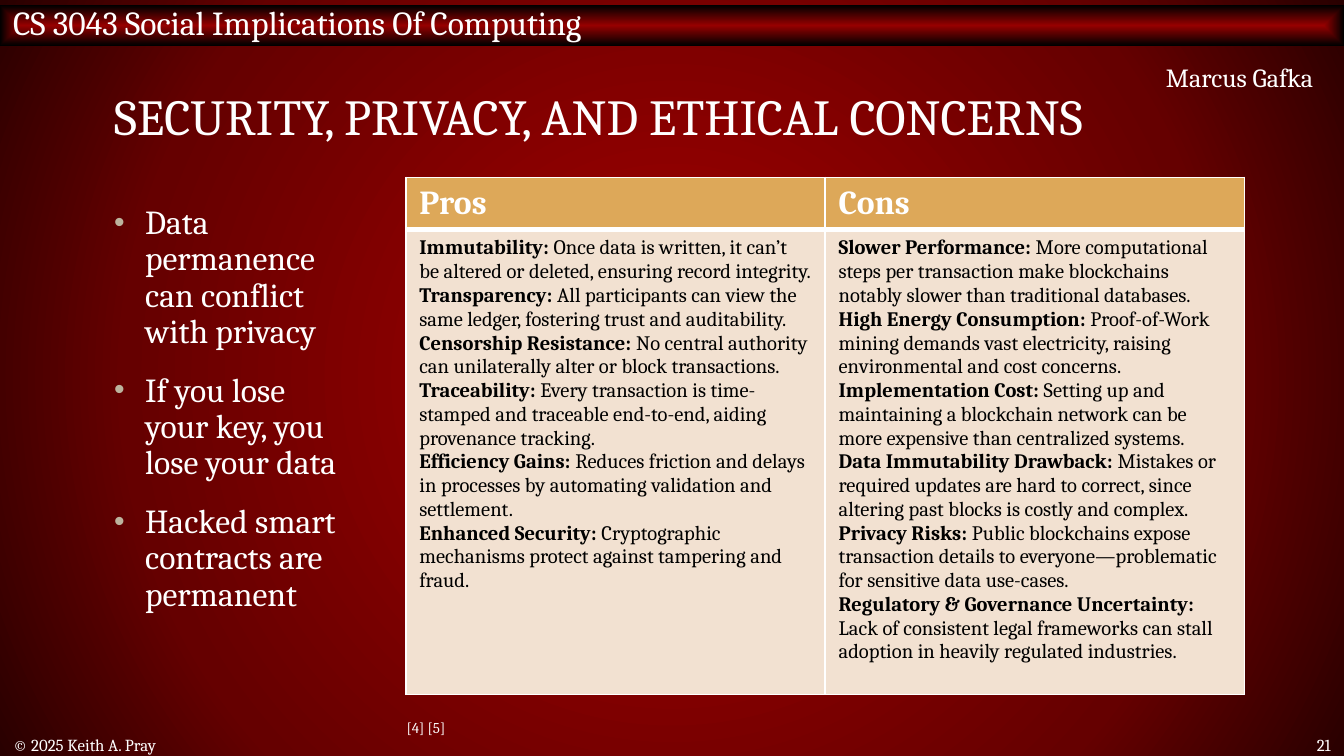
from dataclasses import dataclass
from lxml import etree
from pptx import Presentation
from pptx.dml.color import RGBColor
from pptx.enum.shapes import MSO_SHAPE
from pptx.enum.text import MSO_ANCHOR, MSO_AUTO_SIZE, PP_ALIGN
from pptx.oxml import parse_xml
from pptx.oxml.ns import nsdecls, qn
from pptx.util import Inches, Pt

RECT = MSO_SHAPE.RECTANGLE
MIDDLE, TOP = MSO_ANCHOR.MIDDLE, MSO_ANCHOR.TOP
LEFT, CENTER, RIGHT = PP_ALIGN.LEFT, PP_ALIGN.CENTER, PP_ALIGN.RIGHT
NO_FIT = MSO_AUTO_SIZE.NONE


@dataclass(frozen=True)
class Theme:
    font: str = "Cambria"
    white: str = "FFFFFF"
    black: str = "000000"
    red: str = "960000"
    mid_red: str = "650000"
    dark_red: str = "290000"
    bullet: str = "BCB49E"
    header: str = "DDA859"
    cell: str = "F2E1D1"
    title: int = 27
    large: int = 18
    author: int = 14
    table: int = 11
    footer: int = 9
    citation: int = 8


T = Theme()

BULLETS = [
    "Data permanence can conflict with privacy",
    "If you lose your key, you lose your data",
    "Hacked smart contracts are permanent",
]
PROS = [
    ("Immutability:", "Once data is written, it can’t be altered or deleted, ensuring record integrity."),
    ("Transparency:", "All participants can view the same ledger, fostering trust and auditability."),
    ("Censorship Resistance:", "No central authority can unilaterally alter or block transactions."),
    ("Traceability:", "Every transaction is time-stamped and traceable end-to-end, aiding provenance tracking."),
    ("Efficiency Gains:", "Reduces friction and delays in processes by automating validation and settlement."),
    ("Enhanced Security:", "Cryptographic mechanisms protect against tampering and fraud."),
]
CONS = [
    ("Slower Performance:", "More computational steps per transaction make blockchains notably slower than traditional databases."),
    ("High Energy Consumption:", "Proof-of-Work mining demands vast electricity, raising environmental and cost concerns."),
    ("Implementation Cost:", "Setting up and maintaining a blockchain network can be more expensive than centralized systems."),
    ("Data Immutability Drawback:", "Mistakes or required updates are hard to correct, since altering past blocks is costly and complex."),
    ("Privacy Risks:", "Public blockchains expose transaction details to everyone—problematic for sensitive data use-cases."),
    ("Regulatory & Governance Uncertainty:", "Lack of consistent legal frameworks can stall adoption in heavily regulated industries."),
]


def style_run(r, size, color=T.white, bold=False):
    r.font.name = T.font
    r.font.size = Pt(size)
    r.font.bold = bold
    r.font.color.rgb = RGBColor.from_string(color)


def style_text(tf, size, align=LEFT):
    for p in tf.paragraphs:
        p.alignment = align
        for r in p.runs:
            style_run(r, size)


def place(sp, left, top, width, height):
    sp.left, sp.top = Inches(left), Inches(top)
    sp.width, sp.height = Inches(width), Inches(height)


def set_gradient(element, kind, stops):
    solid = element.xpath(".//a:solidFill")[0]
    gs = "".join(f'<a:gs pos="{pos * 1000}"><a:srgbClr val="{color}"/></a:gs>' for pos, color in stops)
    grad = parse_xml(
        f'<a:gradFill {nsdecls("a")} rotWithShape="1"><a:gsLst>{gs}</a:gsLst><a:path path="{kind}">'
        '<a:fillToRect l="50000" t="50000" r="50000" b="50000"/></a:path></a:gradFill>')
    solid.getparent().replace(solid, grad)


def set_background(s):
    s.background.fill.solid()
    set_gradient(s.element, "circle", [(17, T.red), (71, T.mid_red), (100, T.dark_red)])


def add_banner(s, text):
    sp = s.shapes.add_shape(RECT, 0, Inches(0.04), Inches(10), Inches(0.3))
    sp.shadow.inherit = False
    sp.line.fill.background()
    sp.fill.solid()
    set_gradient(sp.element, "shape", [(0, T.red), (100, T.black)])
    tf = sp.text_frame
    tf.text = text
    tf.margin_top = 0
    tf.vertical_anchor = MIDDLE
    style_text(tf, T.large)


def add_title(s, text):
    sp = s.shapes.title
    place(sp, 0.75, 0.4, 8.5, 1)
    tf = sp.text_frame
    tf.text = text
    tf.auto_size = NO_FIT
    tf.vertical_anchor = MIDDLE
    tf.paragraphs[0].line_spacing = 0.8
    style_text(tf, T.title)


def add_bullets(s, items):
    sp = s.placeholders[1]
    place(sp, 0.75, 1.48, 1.95, 3.67)
    tf = sp.text_frame
    tf.text = "\n".join(items)
    tf.auto_size = NO_FIT
    for i, p in enumerate(tf.paragraphs):
        pPr = p._p.get_or_add_pPr()
        pPr.set("marL", str(Inches(0.23)))
        pPr.set("indent", str(Inches(-0.23)))
        color = etree.SubElement(pPr, qn("a:buClr"))
        etree.SubElement(color, qn("a:srgbClr"), val=T.bullet)
        etree.SubElement(pPr, qn("a:buSzPct"), val="90000")
        etree.SubElement(pPr, qn("a:buFont"), typeface="Arial")
        etree.SubElement(pPr, qn("a:buChar"), char="•")
        p.line_spacing = 0.9
        p.space_before = Pt(12 if i else 0)
    style_text(tf, T.large)


def add_label(s, text, box, size, align=LEFT, anchor=TOP):
    sp = s.shapes.add_textbox(*(Inches(v) for v in box))
    tf = sp.text_frame
    tf.word_wrap = True
    tf.text = text
    tf.vertical_anchor = anchor
    style_text(tf, size, align)


def style_cell(cell, fill, top=1, bottom=1):
    cell.fill.solid()
    cell.fill.fore_color.rgb = RGBColor.from_string(fill)
    tcPr = cell._tc.get_or_add_tcPr()
    for i, (side, width) in enumerate([("L", 1), ("R", 1), ("T", top), ("B", bottom)]):
        tcPr.insert(i, parse_xml(
            f'<a:ln{side} {nsdecls("a")} w="{Pt(width)}"><a:solidFill>'
            f'<a:srgbClr val="{T.white}"/></a:solidFill></a:ln{side}>'))


def fill_points(tf, points):
    for i, (term, detail) in enumerate(points):
        p = tf.paragraphs[0] if i == 0 else tf.add_paragraph()
        for text, bold in [(term, True), (f" {detail}", False)]:
            r = p.add_run()
            r.text = text
            style_run(r, T.table, T.black, bold)


def add_comparison(s, columns):
    frame = s.shapes.add_table(2, len(columns), Inches(3.02), Inches(1.32), Inches(6.24), Inches(3.84))
    table = frame.table
    table.horz_banding = False
    table.rows[0].height, table.rows[1].height = Inches(0.38), Inches(3.46)
    for col, (heading, points) in enumerate(columns):
        head, body = table.cell(0, col), table.cell(1, col)
        style_cell(head, T.header, bottom=3)
        style_cell(body, T.cell, top=3)
        head.text_frame.text = heading
        style_run(head.text_frame.paragraphs[0].runs[0], T.large, bold=True)
        fill_points(body.text_frame, points)


def main():
    prs = Presentation()
    prs.slide_width = Inches(10)
    prs.slide_height = prs.slide_width * 9 // 16
    s = prs.slides.add_slide(prs.slide_layouts[1])
    set_background(s)
    add_banner(s, "CS 3043 Social Implications Of Computing")
    add_title(s, "SECURITY, PRIVACY, AND ETHICAL CONCERNS")
    add_bullets(s, BULLETS)
    add_comparison(s, [("Pros", PROS), ("Cons", CONS)])
    add_label(s, "© 2025 Keith A. Pray", (0, 5.46, 6.08, 0.16), T.footer, anchor=MIDDLE)
    add_label(s, "21", (9.32, 5.46, 0.68, 0.16), T.footer, RIGHT, MIDDLE)
    add_label(s, "Marcus Gafka", (7.49, 0.41, 2.38, 0.34), T.author, RIGHT)
    add_label(s, "[4] [5]", (2.9, 5.3, 0.54, 0.24), T.citation, CENTER)
    prs.save("out.pptx")


if __name__ == "__main__":
    main()
